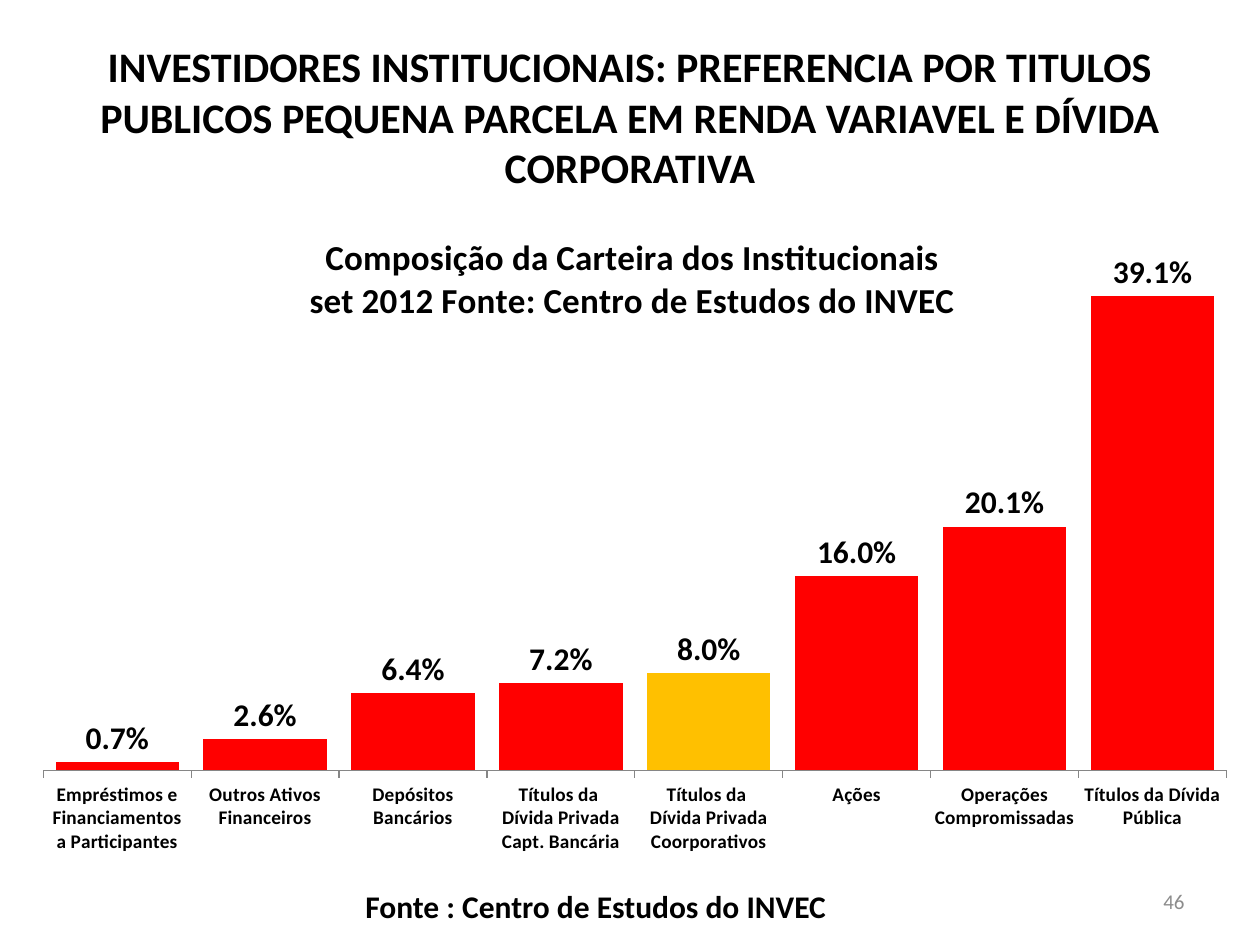
import pptx
import pptx.chart.data
import pptx.dml.color
import pptx.enum.chart
import pptx.enum.text
import pptx.oxml
import pptx.oxml.ns
import pptx.util

# Content
HEADING = ("INVESTIDORES INSTITUCIONAIS: PREFERENCIA POR TITULOS PUBLICOS "
           "PEQUENA PARCELA EM RENDA VARIAVEL E DÍVIDA CORPORATIVA")
CHART_TITLE = ["Composição da Carteira dos Institucionais",
               "set 2012 Fonte: Centro de Estudos do INVEC"]
SOURCE = "Fonte : Centro de Estudos do INVEC"
PAGE = "46"
PORTFOLIO = [
    ("Empréstimos e Financiamentos a Participantes", 0.007),
    ("Outros Ativos Financeiros", 0.026),
    ("Depósitos Bancários", 0.064),
    ("Títulos da  Dívida Privada Capt. Bancária", 0.072),
    ("Títulos da  Dívida Privada Coorporativos", 0.080),
    ("Ações", 0.160),
    ("Operações Compromissadas", 0.201),
    ("Títulos da Dívida Pública", 0.391),
]
HIGHLIGHT = 4
PERCENT = "0.0%"
FONT = "Calibri"
COLORS = {"text": "000000", "page": "8C8C8C", "bar": "FF0000",
          "highlight": "FFC000", "axis": "868686"}

PX = 914400 / 126
Align = pptx.enum.text.PP_ALIGN
Anchor = pptx.enum.text.MSO_ANCHOR


def px(*lengths):
    return [round(n * PX) for n in lengths]


def color(name):
    return pptx.dml.color.RGBColor.from_string(COLORS[name])


def style(font, size, bold=True, name="text"):
    font.name = FONT
    font.size = pptx.util.Pt(size)
    font.bold = bold
    font.color.rgb = color(name)


def paint(fmt, name):
    fmt.fill.solid()
    fmt.fill.fore_color.rgb = color(name)


def add_text(slide, box, text, size, align, anchor=Anchor.MIDDLE,
             wrap=True, bold=True, name="text"):
    tf = slide.shapes.add_textbox(*px(*box)).text_frame
    tf.word_wrap = wrap
    tf.vertical_anchor = anchor
    p = tf.paragraphs[0]
    p.text = text
    p.alignment = align
    style(p.font, size, bold, name)
    return tf


def set_layout(parent, index, **values):
    """Place a chart part by fractions of the chart frame."""
    qn = pptx.oxml.ns.qn
    for old in parent.findall(qn("c:layout")):
        parent.remove(old)
    tags = "".join(f'<c:{tag} val="{val}"/>' for tag, val in values.items())
    parent.insert(index, pptx.oxml.parse_xml(
        f'<c:layout {pptx.oxml.ns.nsdecls("c")}>'
        f'<c:manualLayout>{tags}</c:manualLayout></c:layout>'))


def add_portfolio_chart(slide):
    data = pptx.chart.data.CategoryChartData(number_format=PERCENT)
    data.categories = [label for label, _ in PORTFOLIO]
    data.add_series("Series 1", [share for _, share in PORTFOLIO])
    chart = slide.shapes.add_chart(
        pptx.enum.chart.XL_CHART_TYPE.COLUMN_CLUSTERED,
        *px(25, 165, 1221, 721), data).chart
    style(chart.font, 10, bold=False)
    chart.has_legend = False

    # Title laid over the plot
    tf = chart.chart_title.text_frame
    for i, line in enumerate(CHART_TITLE):
        p = tf.add_paragraph() if i else tf.paragraphs[0]
        p.text = line
        style(p.font, 20)
    chart.chart_title.include_in_layout = True
    set_layout(chart.chart_title.element, 1,
               xMode="edge", yMode="edge", x=0.23, y=0.09)
    plot_area = chart.element.find(".//" + pptx.oxml.ns.qn("c:plotArea"))
    set_layout(plot_area, 0, layoutTarget="inner", xMode="edge", yMode="edge",
               x=0.015, y=0.083, w=0.969, h=0.757)

    # Axes
    axis = chart.category_axis
    axis.major_tick_mark = pptx.enum.chart.XL_TICK_MARK.OUTSIDE
    axis.format.line.color.rgb = color("axis")
    style(axis.tick_labels.font, 11)
    values = chart.value_axis
    values.minimum_scale, values.maximum_scale = 0, 0.45
    values.has_major_gridlines = False
    values.tick_labels.number_format = PERCENT
    values.tick_labels.number_format_is_linked = False
    values.visible = False

    # Columns and their labels
    plot = chart.plots[0]
    plot.gap_width = 20
    plot.vary_by_categories = False
    series = plot.series[0]
    paint(series.format, "bar")
    paint(series.points[HIGHLIGHT].format, "highlight")
    labels = series.data_labels
    labels.show_value = True
    labels.position = pptx.enum.chart.XL_LABEL_POSITION.OUTSIDE_END
    labels.number_format = PERCENT
    labels.number_format_is_linked = False
    style(labels.font, 18)


def main():
    prs = pptx.Presentation()
    prs.slide_width, prs.slide_height = px(1260, 945)
    slide = prs.slides.add_slide(prs.slide_layouts[6])

    add_text(slide, (63, 38, 1134, 157), HEADING, 24, Align.CENTER)
    add_portfolio_chart(slide)

    # Footer
    tf = add_text(slide, (353, 881, 503, 50), SOURCE, 18, Align.LEFT,
                  anchor=Anchor.TOP, wrap=False)
    tf.auto_size = pptx.enum.text.MSO_AUTO_SIZE.SHAPE_TO_FIT_TEXT
    add_text(slide, (903, 876, 294, 50), PAGE, 12, Align.RIGHT,
             bold=False, name="page")

    prs.save("out.pptx")


if __name__ == "__main__":
    main()
